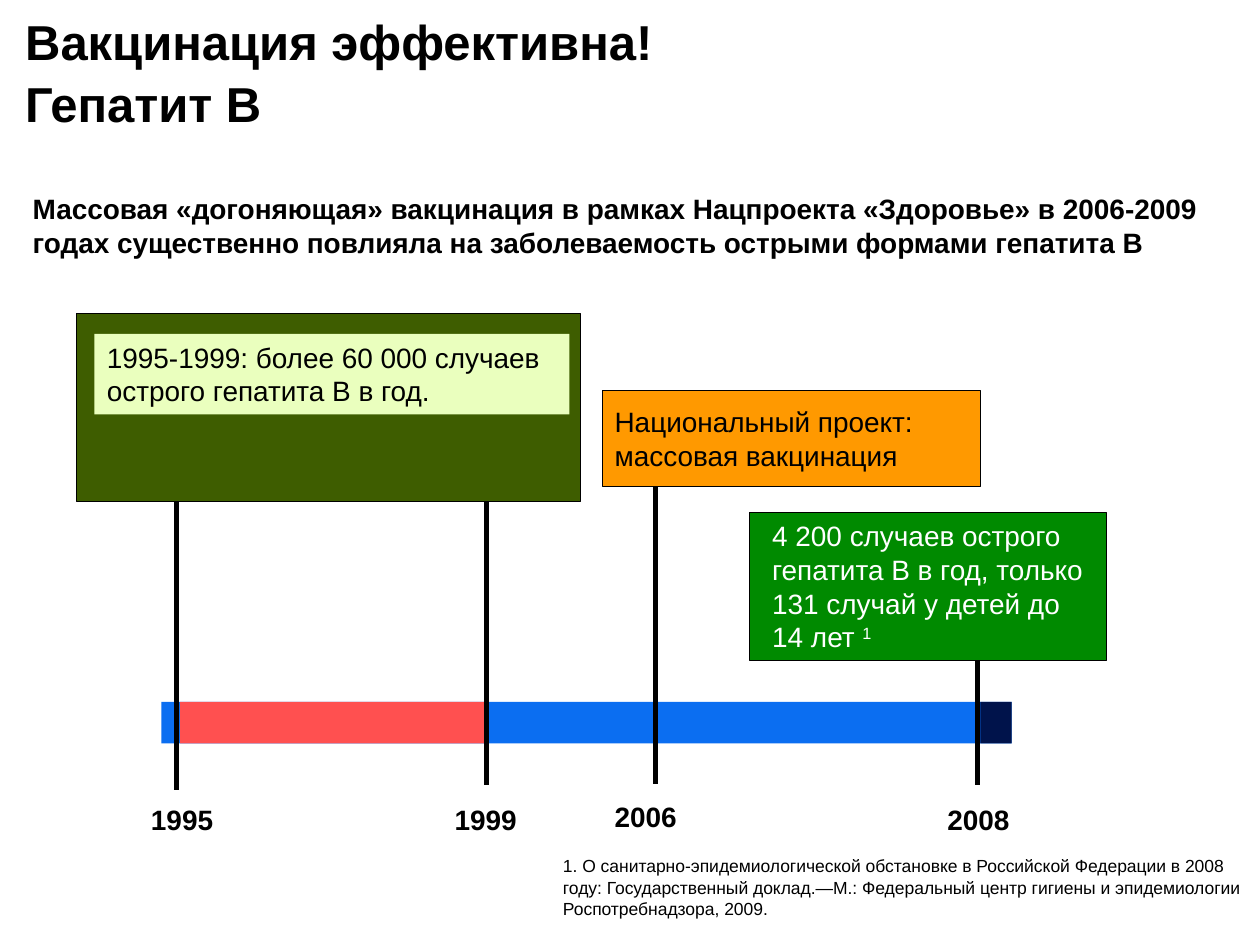
from lxml import etree
from pptx import Presentation
from pptx.dml.color import RGBColor
from pptx.enum import shapes, text
from pptx.oxml import ns
from pptx.util import Inches, Pt

COLORS = {
    "black": "000000", "white": "FFFFFF", "blue": "0B6EF1", "navy": "00134B",
    "red": "FF5050", "olive": "3E5D00", "lime": "EAFFBE",
    "orange": "FF9900", "green": "008A00",
}
BAR_TOP, BAR_HEIGHT = 5.57, 0.33


def rgb(name):
    return RGBColor.from_string(COLORS[name])


def place(shape, box):
    shape.left, shape.top, shape.width, shape.height = map(Inches, box)


def add_span(para, words, size=16, color="black", bold=False):
    span = para.add_run()
    span.text = words
    span.font.name = "Arial"
    span.font.size = Pt(size)
    span.font.bold = bold
    span.font.color.rgb = rgb(color)
    return span


def prepare_frame(shape, anchor=text.MSO_ANCHOR.TOP):
    """Set wrapping and anchor, and return the first paragraph."""
    frame = shape.text_frame
    frame.word_wrap = True
    frame.auto_size = text.MSO_AUTO_SIZE.NONE
    frame.vertical_anchor = anchor
    para = frame.paragraphs[0]
    para.alignment = text.PP_ALIGN.LEFT
    return para


def add_rect(page, box, fill, outlined=False):
    rect = page.shapes.add_shape(
        shapes.MSO_SHAPE.RECTANGLE, *map(Inches, box))
    rect.shadow.inherit = False
    rect.fill.solid()
    rect.fill.fore_color.rgb = rgb(fill)
    if outlined:
        rect.line.color.rgb = rgb("black")
        rect.line.width = Pt(0.75)
    else:
        rect.line.fill.background()
    return rect


def add_textbox(page, box):
    return prepare_frame(page.shapes.add_textbox(*map(Inches, box)))


def add_bar(page, left, width, fill):
    add_rect(page, (left, BAR_TOP, width, BAR_HEIGHT), fill)


def add_year(page, year, x, top, bottom, label_left, label_top):
    """Vertical marker across the time bar, with its year below."""
    marker = page.shapes.add_connector(
        shapes.MSO_CONNECTOR.STRAIGHT,
        Inches(x), Inches(bottom), Inches(x), Inches(top))
    marker.line.color.rgb = rgb("black")
    marker.line.width = Pt(3)
    etree.SubElement(marker._element.spPr, ns.qn("a:effectLst"))
    para = add_textbox(page, (label_left, label_top, 0.7, 0.37))
    add_span(para, year, bold=True)


def fill_heading(page, box):
    title = page.shapes.title
    place(title, box)
    para = prepare_frame(title, text.MSO_ANCHOR.MIDDLE)
    para.line_spacing = 1.05
    add_span(para, "Вакцинация эффективна!", 28, bold=True)
    para.add_line_break()
    add_span(para, "Гепатит В", 28, bold=True)


def fill_summary(page, box):
    body = page.placeholders[1]
    place(body, box)
    para = prepare_frame(body)
    props = para._p.get_or_add_pPr()
    props.set("marL", "0")
    props.set("indent", "0")
    etree.SubElement(props, ns.qn("a:buNone"))
    para.space_before = Pt(0)
    para.space_after = Pt(10)
    add_span(para, "Массовая «догоняющая» вакцинация в рамках Нацпроекта "
             "«Здоровье» в 2006-2009 годах существенно повлияла на "
             "заболеваемость острыми формами гепатита В", bold=True)


def draw_project(page, box):
    left, top, _, height = box
    add_year(page, "2006", left + 0.42, top + height - 0.2, 6.22, left, 6.3)
    rect = add_rect(page, box, "orange", outlined=True)
    para = prepare_frame(rect, text.MSO_ANCHOR.MIDDLE)
    add_span(para, "Национальный проект:")
    para = rect.text_frame.add_paragraph()
    para.alignment = text.PP_ALIGN.LEFT
    add_span(para, "массовая вакцинация")


def draw_result(page, box):
    left, top, width, height = box
    add_year(page, "2008", left + 1.81, top + height - 0.34, 6.23,
             left + 1.47, 6.32)
    add_rect(page, box, "green", outlined=True)
    para = add_textbox(page, (left + 0.08, top, width - 0.08, height))
    add_span(para, "4 200 случаев острого гепатита В в год, только "
             "131 случай у детей до 14 лет ", color="white")
    note = add_span(para, "1", color="white")
    note.font._element.set("baseline", "30000")
    add_bar(page, left + 1.83, 0.25, "navy")


def draw_before(page, box):
    left, top, width, height = box
    line_top = top + height - 0.3
    add_bar(page, left + 0.82, 2.43, "red")
    add_year(page, "1995", left + 0.79, line_top, 6.27, left + 0.49, 6.32)
    add_year(page, "1999", left + 3.25, line_top, 6.23, left + 2.9, 6.32)
    add_rect(page, box, "olive", outlined=True)
    panel = add_rect(
        page, (left + 0.14, top + 0.16, width - 0.23, 0.64), "lime")
    add_span(prepare_frame(panel),
             "1995-1999: более 60 000 случаев острого гепатита В в год.")


def draw_footnote(page, box):
    add_span(add_textbox(page, box),
             "1. О санитарно-эпидемиологической обстановке в Российской "
             "Федерации в 2008 году: Государственный доклад.—М.: Федеральный "
             "центр гигиены и эпидемиологии Роспотребнадзора, 2009.", 10)


def main():
    deck = Presentation()
    deck.slide_width, deck.slide_height = Inches(10), Inches(7.5)
    page = deck.slides.add_slide(deck.slide_layouts[1])
    fill_heading(page, (0.1, 0.02, 9.56, 1.08))
    fill_summary(page, (0.16, 1.47, 9.84, 0.87))
    add_bar(page, 1.28, 6.75, "blue")
    draw_project(page, (4.78, 3.1, 3, 0.76))
    draw_result(page, (5.95, 4.07, 2.83, 1.17))
    draw_before(page, (0.61, 2.49, 4, 1.49))
    draw_footnote(page, (4.37, 6.74, 5.63, 0.61))
    deck.save("out.pptx")


if __name__ == "__main__":
    main()
